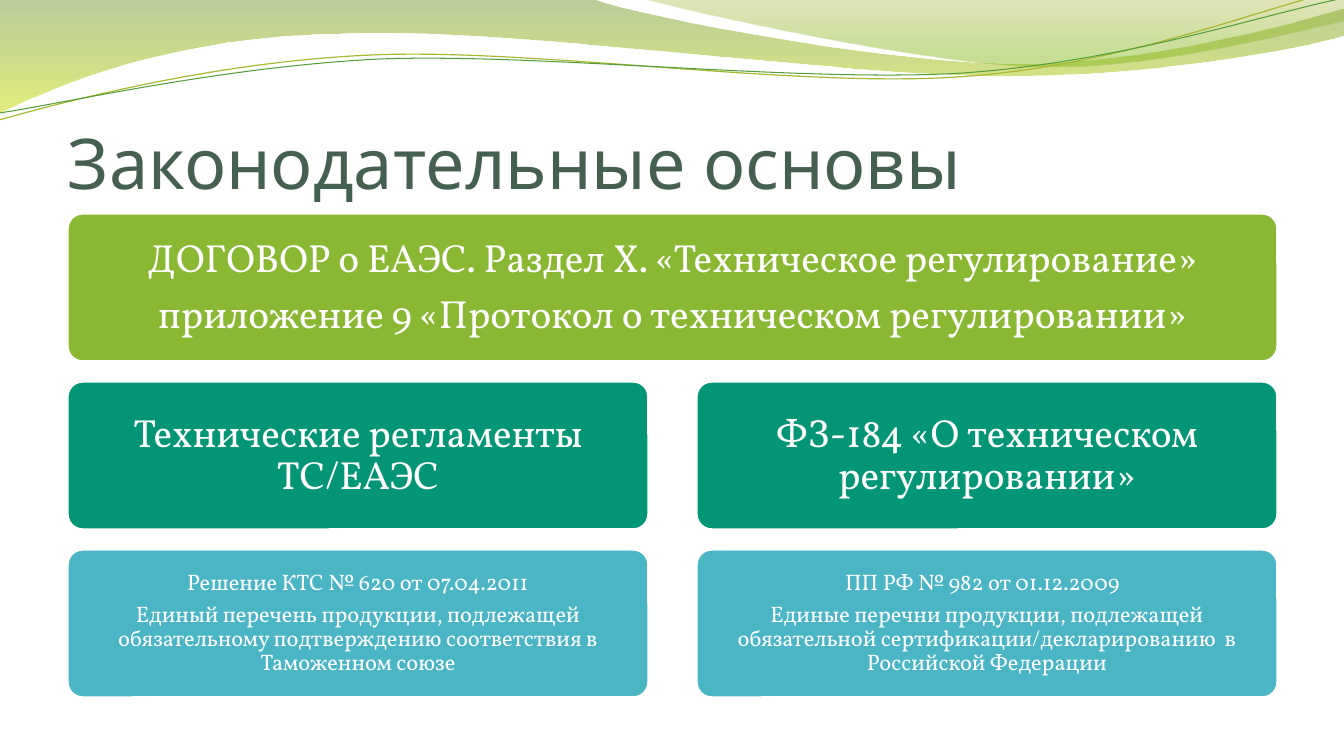
from lxml import etree
from pptx import Presentation
from pptx.dml.color import RGBColor
from pptx.enum.shapes import MSO_SHAPE
from pptx.enum.text import MSO_ANCHOR, MSO_AUTO_SIZE, PP_ALIGN
from pptx.oxml.ns import qn
from pptx.util import Emu, Pt

PX = 12192000 / 1344
COLORS = {
    "title": "455F51", "white": "FFFFFF",
    "treaty": "8AB833", "law": "029676", "list": "4AB5C4",
    "moss": "69921C", "lime": "CCE10F", "olive": "9BAA1A", "leaf": "81BA16",
    "olive line": "A9B733", "green line": "549E39",
}


def px(length):
    return Emu(round(length * PX))


def add_outline(shapes, start, segments, close):
    """Draw lines (segments of one point) and cubic curves (of three points)."""
    points = [(px(x), px(y)) for segment in segments for x, y in segment]
    builder = shapes.build_freeform(px(start[0]), px(start[1]))
    builder.add_line_segments(points, close=close)
    outline = builder.convert_to_shape()
    outline.shadow.inherit = False
    steps = iter(list(outline._element.spPr.iter(qn("a:lnTo"))))
    for segment in segments:
        first, *others = [next(steps) for _ in segment]
        if others:
            first.tag = qn("a:cubicBezTo")
        for step in others:
            first.append(step[0])
            step.getparent().remove(step)
    return outline


prs = Presentation()
prs.slide_width, prs.slide_height = px(1344), px(756)
slide = prs.slides.add_slide(prs.slide_layouts[5])
shapes = slide.shapes

# Waves: start, segments, gradient stops (position, colour, opacity %)
waves = [
    ((0, 0),
     [[(592, -1)],
      [(639, 17), (891, 64), (1019, 64)],
      [(1146, 64), (1287, 26), (1344, 9)],
      [(1345, 36)],
      [(1321, 44), (1168, 77), (1002, 76)],
      [(836, 76), (513, 28), (346, 34)],
      [(173, 36), (61, 84), (-2, 114)],
      [(0, 0)]],
     [(0, "moss", 45), (1, "lime", 55)]),
    ((643, -1),
     [[(684, 11), (916, 62), (1033, 66)],
      [(1149, 70), (1292, 32), (1344, 21)],
      [(1344, 0)],
      [(643, -1)]],
     [(0, "olive", 30), (0.8, "leaf", 45)]),
]
for start, segments, stops in waves:
    wave = add_outline(shapes, start, segments, close=True)
    wave.line.fill.background()
    wave.fill.gradient()
    wave.fill.gradient_angle = 270
    for stop, (position, color, _) in zip(wave.fill.gradient_stops, stops):
        stop.position = position
        stop.color.rgb = RGBColor.from_string(COLORS[color])
    for tint, (_, _, opacity) in zip(wave._element.spPr.iter(qn("a:srgbClr")), stops):
        etree.SubElement(tint, qn("a:alpha"), val=str(opacity * 1000))

# Thin lines that follow the waves
strands = [
    ((-1, 120),
     [[(64, 102), (212, 62), (372, 55)],
      [(531, 48), (795, 88), (957, 77)],
      [(1119, 67), (1261, 8), (1341, -10)]], "olive line", 0.85),
    ((-1, 113),
     [[(62, 104), (220, 67), (380, 59)],
      [(541, 53), (802, 83), (963, 73)],
      [(1123, 62), (1265, 14), (1344, -2)]], "green line", 0.75),
]
for start, segments, color, weight in strands:
    strand = add_outline(shapes, start, segments, close=False)
    strand.fill.background()
    strand.line.color.rgb = RGBColor.from_string(COLORS[color])
    strand.line.width = Pt(weight)

title = shapes.title
title.left, title.top, title.width, title.height = px(68), px(78), px(1210), px(126)
heading = title.text_frame
heading.text = "Законодательные основы"
heading.auto_size = MSO_AUTO_SIZE.NONE
heading.vertical_anchor = MSO_ANCHOR.BOTTOM
heading.margin_left = heading.margin_right = heading.margin_bottom = 0
heading.margin_top = px(5)
heading.paragraphs[0].alignment = PP_ALIGN.LEFT
heading.paragraphs[0].font.name = "League Spartan"
heading.paragraphs[0].font.size = Pt(50)
heading.paragraphs[0].font.color.rgb = RGBColor.from_string(COLORS["title"])

LEFT, TOP, CARD_HEIGHT = 68, 214, 147
COLUMN_STEP, ROW_STEP = 629, 168
HALF = 580
FULL = COLUMN_STEP + HALF

# Rows: colour, card width, text size, inset, cards
levels = [
    ("treaty", FULL, 28, 8, [
        ["ДОГОВОР о ЕАЭС. Раздел Х. «Техническое регулирование»",
         "приложение 9 «Протокол о техническом регулировании»"]]),
    ("law", HALF, 28, 8, [
        ["Технические регламенты ТС/ЕАЭС"],
        ["ФЗ-184 «О техническом регулировании»"]]),
    ("list", HALF, 16, 3, [
        ["Решение КТС № 620 от 07.04.2011",
         "Единый перечень продукции, подлежащей обязательному "
         "подтверждению соответствия в Таможенном союзе"],
        ["ПП РФ № 982 от 01.12.2009  ",
         "Единые перечни продукции, подлежащей обязательной "
         "сертификации/декларированию  в Российской Федерации"]]),
]
for row, (level, width, size, inset, cards) in enumerate(levels):
    for column, lines in enumerate(cards):
        card = shapes.add_shape(
            MSO_SHAPE.ROUNDED_RECTANGLE,
            px(LEFT + column * COLUMN_STEP), px(TOP + row * ROW_STEP),
            px(width), px(CARD_HEIGHT))
        card.adjustments[0] = 0.1
        card.shadow.inherit = False
        card.fill.solid()
        card.fill.fore_color.rgb = RGBColor.from_string(COLORS[level])
        card.line.color.rgb = RGBColor.from_string(COLORS["white"])
        card.line.width = Pt(1)
        frame = card.text_frame
        frame.word_wrap = True
        frame.vertical_anchor = MSO_ANCHOR.MIDDLE
        frame.margin_left = frame.margin_right = px(inset)
        frame.margin_top = frame.margin_bottom = px(inset)
        frame.text = "\n".join(lines)
        for paragraph in frame.paragraphs:
            paragraph.alignment = PP_ALIGN.CENTER
            paragraph.line_spacing = 0.9
            paragraph.space_after = Pt(size * 0.35)
            paragraph.font.name = "Vollkorn"
            paragraph.font.size = Pt(size)
            paragraph.font.color.rgb = RGBColor.from_string(COLORS["white"])

prs.save("out.pptx")
